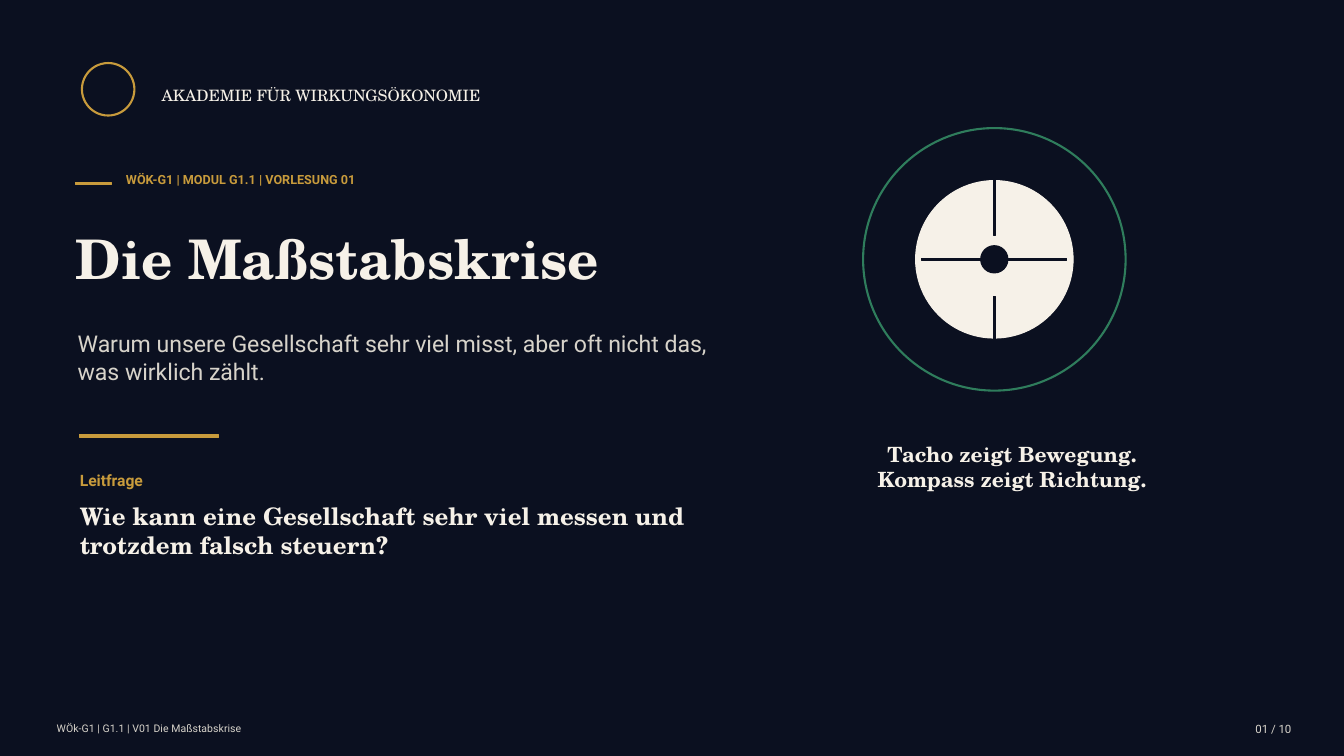
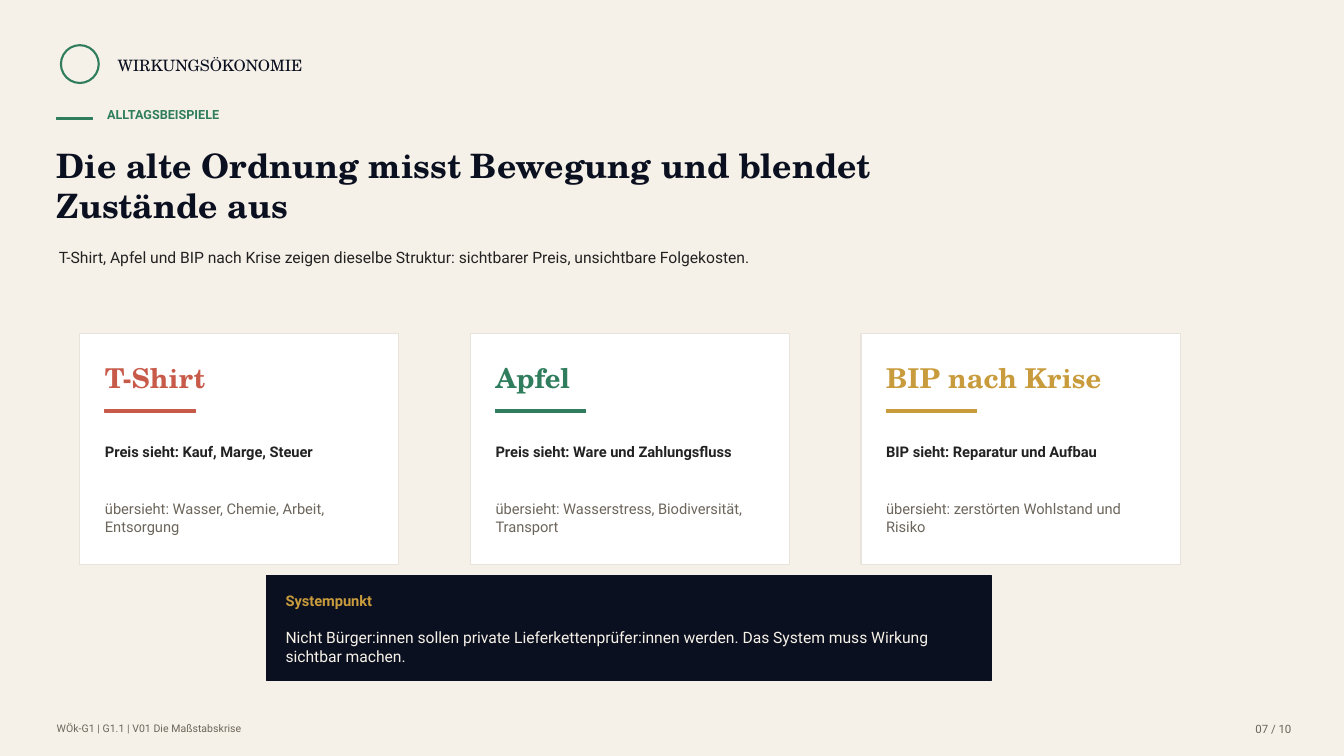
"""Build two slides of the lecture on the crisis of measures, on a grid of 1280 columns by 720 rows."""
from pptx import Presentation
from pptx.dml.color import RGBColor
from pptx.enum.shapes import MSO_SHAPE as Shape
from pptx.enum.text import MSO_ANCHOR as Anchor, MSO_AUTO_SIZE as AutoSize, PP_ALIGN as Align
from pptx.util import Emu, Inches, Pt

COLUMNS, ROWS = 1280, 720
STEP = Inches(7.5) // ROWS
SERIF, SANS = "TeX Gyre Schola", "Roboto"

NIGHT = RGBColor(0x0B, 0x10, 0x20)
CREAM = RGBColor(0xF6, 0xF1, 0xE8)
GREEN = RGBColor(0x2F, 0x7D, 0x5C)
GOLD = RGBColor(0xC8, 0x9B, 0x3C)
RED = RGBColor(0xC8, 0x5A, 0x4A)
WHITE = RGBColor(0xFF, 0xFF, 0xFF)
BORDER = RGBColor(0xE8, 0xE4, 0xDC)
TEXT = RGBColor(0x22, 0x22, 0x22)
SAND = RGBColor(0xD7, 0xD3, 0xCA)
STONE = RGBColor(0x6C, 0x65, 0x5B)


def draw(page, kind, area, fill, line=None, weight=0):
    """Add a preset shape; the outline takes the fill colour unless line is given."""
    shape = page.shapes.add_shape(kind, *[Emu(value * STEP) for value in area])
    shape.shadow.inherit = False
    if fill is None:
        shape.fill.background()
    else:
        shape.fill.solid()
        shape.fill.fore_color.rgb = fill
    shape.line.color.rgb = line or fill
    shape.line.width = Pt(weight)


def write(page, text, area, size, color, font=SANS, bold=False, align=Align.LEFT, box=None):
    """Write text into the given placeholder, or into a new text box."""
    left, top, width, height = [Emu(value * STEP) for value in area]
    if box is None:
        box = page.shapes.add_textbox(left, top, width, height)
    box.left, box.top, box.width, box.height = left, top, width, height
    frame = box.text_frame
    frame.text = text
    frame.word_wrap = True
    frame.auto_size = AutoSize.NONE
    frame.vertical_anchor = Anchor.TOP
    frame.margin_left = frame.margin_top = frame.margin_right = frame.margin_bottom = 0
    for para in frame.paragraphs:
        para.alignment = align
        for span in para.runs:
            span.font.name, span.font.size = font, Pt(size)
            span.font.bold, span.font.color.rgb = bold, color


deck = Presentation()
deck.slide_width, deck.slide_height = Emu(COLUMNS * STEP), Emu(ROWS * STEP)

styles = [
    dict(ground=NIGHT, ink=CREAM, accent=GOLD, muted=SAND, number="01 / 10",
         emblem=(78, 60, 50, 50), name="AKADEMIE FÜR WIRKUNGSÖKONOMIE", name_at=(154, 82),
         kicker="WÖK-G1 | MODUL G1.1 | VORLESUNG 01", kicker_at=(72, 164),
         title="Die Maßstabskrise", title_area=(72, 214, 650, 72), title_size=39),
    dict(ground=CREAM, ink=NIGHT, accent=GREEN, muted=STONE, number="07 / 10",
         emblem=(58, 43, 36, 36), name="WIRKUNGSÖKONOMIE", name_at=(112, 53),
         kicker="ALLTAGSBEISPIELE", kicker_at=(54, 102),
         title="Die alte Ordnung misst Bewegung und blendet Zustände aus",
         title_area=(54, 138, 900, 86), title_size=24),
]

for style in styles:
    page = deck.slides.add_slide(deck.slide_layouts[5])
    page.background.fill.solid()
    page.background.fill.fore_color.rgb = style["ground"]
    write(page, style["title"], style["title_area"], style["title_size"], style["ink"],
          SERIF, True, box=page.shapes.title)
    draw(page, Shape.OVAL, style["emblem"], None, style["accent"], 1.5)
    write(page, style["name"], (*style["name_at"], 420, 24), 11.2, style["ink"], SERIF)
    left, top = style["kicker_at"]
    draw(page, Shape.RECTANGLE, (left, top + 10, 34, 2), style["accent"])
    write(page, style["kicker"], (left + 48, top, 420, 24), 9, style["accent"], bold=True)
    write(page, "WÖk-G1 | G1.1 | V01 Die Maßstabskrise", (54, 688, 520, 18), 7.5, style["muted"])
    write(page, style["number"], (1164, 688, 66, 18), 8.2, style["muted"], align=Align.RIGHT)

opening, examples = deck.slides

write(opening, "Warum unsere Gesellschaft sehr viel misst, aber oft nicht das, was wirklich zählt.",
      (74, 314, 640, 58), 16.5, SAND)
draw(opening, Shape.RECTANGLE, (76, 414, 132, 3), GOLD)
write(opening, "Leitfrage", (76, 448, 120, 22), 11.2, GOLD, bold=True)
write(opening, "Wie kann eine Gesellschaft sehr viel messen und trotzdem falsch steuern?",
      (76, 478, 598, 56), 17.2, CREAM, SERIF, True)

center_x, center_y = 947, 247
for radius, fill, line, weight in [(125, None, GREEN, 1.5), (75, CREAM, CREAM, 0), (13, NIGHT, NIGHT, 0.75)]:
    draw(opening, Shape.OVAL, (center_x - radius, center_y - radius, 2 * radius, 2 * radius),
         fill, line, weight)
for across, down, width, height in [(-1, -89, 2, 66), (-1, 35, 2, 66), (-69, -1, 58, 2), (11, -1, 58, 2)]:
    draw(opening, Shape.RECTANGLE, (center_x + across, center_y + down, width, height), NIGHT)
write(opening, "Tacho zeigt Bewegung.\nKompass zeigt Richtung.", (814, 420, 300, 58),
      15, CREAM, SERIF, True, Align.CENTER)

write(examples, "T-Shirt, Apfel und BIP nach Krise zeigen dieselbe Struktur: "
      "sichtbarer Preis, unsichtbare Folgekosten.", (56, 236, 800, 42), 11.2, TEXT)

cards = [
    ("T-Shirt", RED, "Preis sieht: Kauf, Marge, Steuer",
     "übersieht: Wasser, Chemie, Arbeit, Entsorgung"),
    ("Apfel", GREEN, "Preis sieht: Ware und Zahlungsfluss",
     "übersieht: Wasserstress, Biodiversität, Transport"),
    ("BIP nach Krise", GOLD, "BIP sieht: Reparatur und Aufbau",
     "übersieht: zerstörten Wohlstand und Risiko"),
]
card_left, card_top, card_pitch, card_padding = 76, 318, 372, 24
for index, (heading, color, seen, missed) in enumerate(cards):
    left = card_left + index * card_pitch
    inner = left + card_padding
    draw(examples, Shape.RECTANGLE, (left, card_top, 304, 220), WHITE, BORDER, 0.75)
    write(examples, heading, (inner, card_top + 26, 240, 32), 19.5, color, SERIF, True)
    draw(examples, Shape.RECTANGLE, (inner, card_top + 72, 86, 3), color)
    write(examples, seen, (inner, card_top + 104, 248, 36), 10.5, TEXT, bold=True)
    write(examples, missed, (inner, card_top + 158, 248, 44), 10.5, STONE)

draw(examples, Shape.RECTANGLE, (254, 548, 690, 100), NIGHT, NIGHT, 0.75)
write(examples, "Systempunkt", (272, 564, 654, 24), 10.5, GOLD, bold=True)
write(examples, "Nicht Bürger:innen sollen private Lieferkettenprüfer:innen werden. "
      "Das System muss Wirkung sichtbar machen.", (272, 598, 654, 36), 11.2, CREAM)

deck.save("out.pptx")
